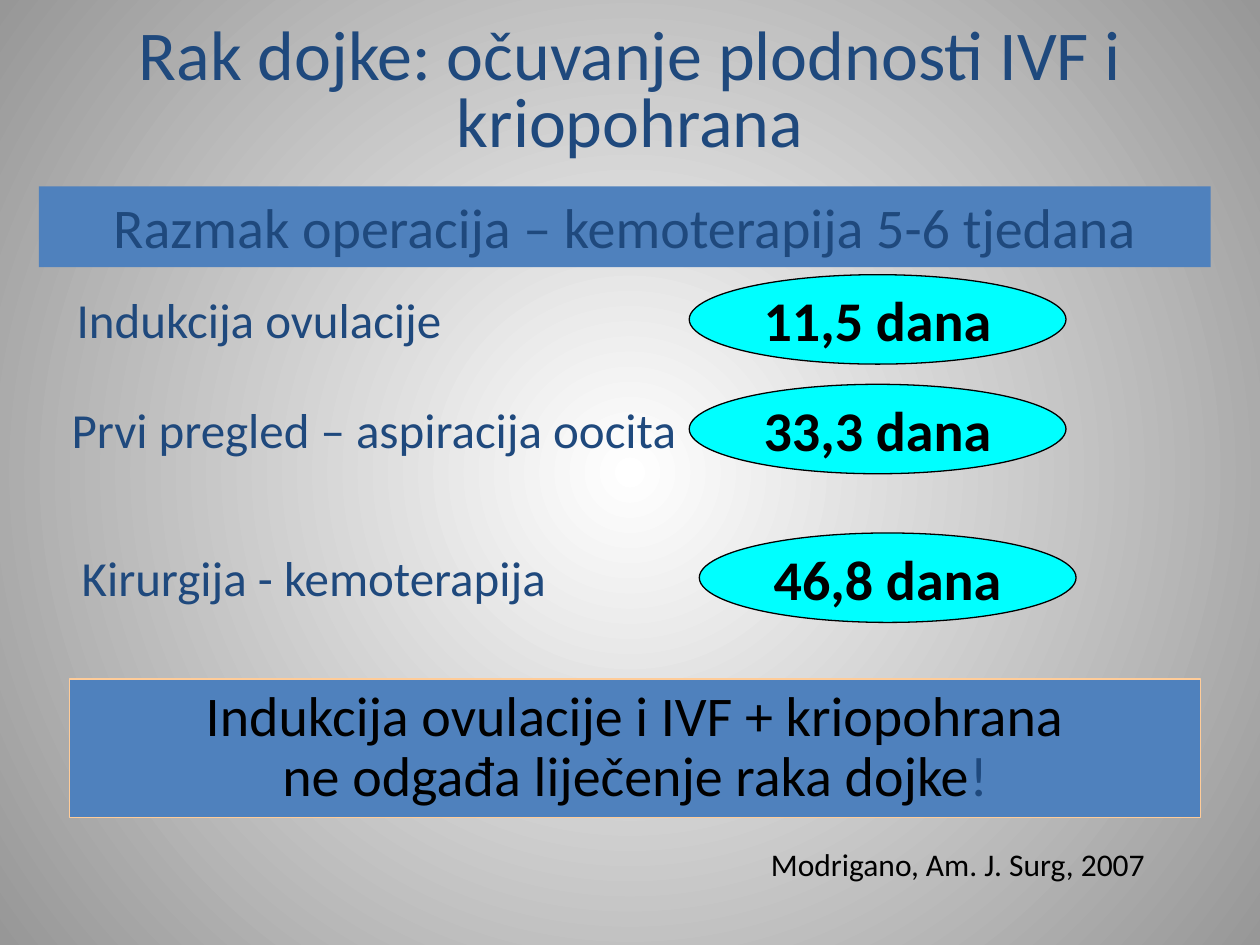
from lxml import etree
from pptx import Presentation
from pptx.dml.color import RGBColor
from pptx.enum.shapes import MSO_SHAPE as Shape
from pptx.enum.text import MSO_ANCHOR as Anchor, PP_ALIGN as Align
from pptx.oxml.ns import qn
from pptx.util import Inches, Pt

FONT = "Calibri"
COLORS = {"navy": "1F497D", "blue": "4F81BD", "cyan": "00FFFF", "black": "000000",
          "peach": "FFCC99", "center": "FFFFFF", "edge": "979797"}

TITLE = "Rak dojke: očuvanje plodnosti IVF i kriopohrana"
INTERVAL = "Razmak operacija – kemoterapija 5-6 tjedana"
# label, label left, top and width, duration, oval left
STAGES = [
    ("Indukcija ovulacije", 0.51, 2.25, 4.41, "11,5 dana", 5.47),
    ("Prvi pregled – aspiracija oocita", 0.47, 3.12, 6.38, "33,3 dana", 5.47),
    ("Kirurgija - kemoterapija", 0.55, 4.3, 4.8, "46,8 dana", 5.55),
]
CONCLUSION = [
    [("Indukcija ovulacije i IVF + kriopohrana", "black")],
    [("ne odgađa liječenje raka dojke", "black"), ("!", "navy")],
]
CITATION = "Modrigano, Am. J. Surg, 2007"
LABEL_HEIGHT, OVAL_WIDTH, OVAL_HEIGHT = 0.57, 2.99, 0.71


def rgb(name):
    return RGBColor.from_string(COLORS[name])


def write(shape, lines, size, align=Align.LEFT, spacing=None, bold=None,
          anchor=Anchor.TOP, wrap=True):
    """Fill a shape with lines, each a list of (text, color) runs."""
    frame = shape.text_frame
    frame.word_wrap = wrap
    frame.vertical_anchor = anchor
    for i, line in enumerate(lines):
        paragraph = frame.add_paragraph() if i else frame.paragraphs[0]
        paragraph.alignment = align
        paragraph.line_spacing = spacing
        for text, color in line:
            run = paragraph.add_run()
            run.text = text
            run.font.name = FONT
            run.font.size = Pt(size)
            run.font.bold = bold
            run.font.color.rgb = rgb(color)


def add_text(slide, box, text, size, color, **style):
    write(slide.shapes.add_textbox(*map(Inches, box)), [[(text, color)]], size, **style)


def add_filled(slide, kind, box, fill, line=None):
    shape = slide.shapes.add_shape(kind, *map(Inches, box))
    shape.shadow.inherit = False
    shape.fill.solid()
    shape.fill.fore_color.rgb = rgb(fill)
    if line:
        shape.line.color.rgb = rgb(line)
        shape.line.width = Pt(0.75)
    else:
        shape.line.fill.background()
    return shape


def paint_radial_background(slide):
    fill = slide.background.fill
    fill.gradient()
    for stop, color, position in zip(fill.gradient_stops, ("center", "edge"), (0, 1)):
        stop.color.rgb = rgb(color)
        stop.position = position
    linear = next(slide.element.iter(qn("a:lin")))
    radial = etree.Element(qn("a:path"), path="circle")
    etree.SubElement(radial, qn("a:fillToRect"), {side: "50000" for side in "ltrb"})
    linear.getparent().replace(linear, radial)


def main():
    deck = Presentation()
    deck.slide_width, deck.slide_height = Inches(10), Inches(7.5)
    slide = deck.slides.add_slide(deck.slide_layouts[6])
    paint_radial_background(slide)

    add_text(slide, (0, 0.16, 10, 1.19), TITLE, 40, "navy", align=Align.CENTER, spacing=0.8)
    banner = add_filled(slide, Shape.RECTANGLE, (0.31, 1.48, 9.3, 0.64), "blue")
    write(banner, [[(INTERVAL, "navy")]], 32, align=Align.CENTER)

    for label, left, top, width, duration, oval_left in STAGES:
        add_text(slide, (left, top, width, LABEL_HEIGHT), label, 28, "navy")
        oval_top = top + (LABEL_HEIGHT - OVAL_HEIGHT) / 2
        oval = add_filled(slide, Shape.OVAL, (oval_left, oval_top, OVAL_WIDTH, OVAL_HEIGHT),
                          "cyan", "black")
        write(oval, [[(duration, "black")]], 32, align=Align.CENTER, bold=True,
              anchor=Anchor.MIDDLE, wrap=False)

    conclusion = add_filled(slide, Shape.RECTANGLE, (0.55, 5.39, 8.98, 1.1), "blue", "peach")
    write(conclusion, CONCLUSION, 32, align=Align.CENTER, spacing=0.9,
          anchor=Anchor.MIDDLE, wrap=False)
    add_text(slide, (6.02, 6.66, 4.41, 0.4), CITATION, 18, "black")

    deck.save("out.pptx")


if __name__ == "__main__":
    main()
